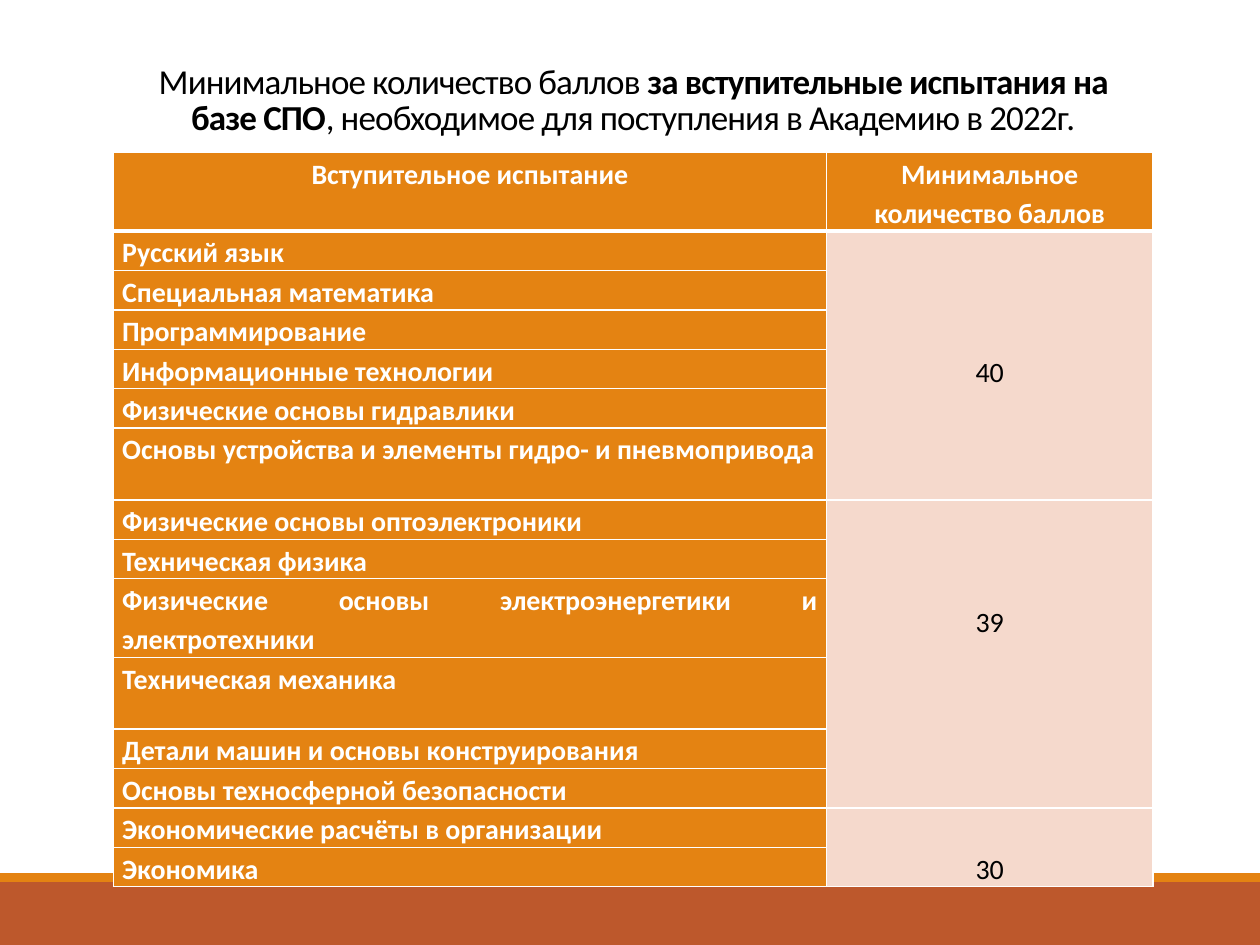
"""Build a slide listing minimum entrance exam scores."""
from lxml import etree
from pptx import Presentation, util as u
from pptx.dml.color import RGBColor
from pptx.enum import shapes, text
from pptx.oxml.ns import qn

TITLE = [
    ("Минимальное количество баллов ", False),
    ("за вступительные испытания на базе СПО", True),
    (", необходимое для поступления в Академию в 2022г.", False),
]
HEADINGS = ("Вступительное испытание", "Минимальное количество баллов")
TALL_EXAMS = {
    "Основы устройства и элементы гидро- и пневмопривода": 0.57,
    "Физические основы электроэнергетики и электротехники": 0.62,
    "Техническая механика": 0.57,
}
GROUPS = [
    {"score": "40", "anchor": text.MSO_ANCHOR.MIDDLE, "top": 0.08, "bottom": 0,
     "exams": ["Русский язык", "Специальная математика", "Программирование",
               "Информационные технологии", "Физические основы гидравлики",
               "Основы устройства и элементы гидро- и пневмопривода"]},
    {"score": "39", "anchor": text.MSO_ANCHOR.MIDDLE, "top": 0, "bottom": 0.54,
     "exams": ["Физические основы оптоэлектроники", "Техническая физика",
               "Физические основы электроэнергетики и электротехники",
               "Техническая механика", "Детали машин и основы конструирования",
               "Основы техносферной безопасности"]},
    {"score": "30", "anchor": text.MSO_ANCHOR.BOTTOM, "top": 0, "bottom": 0,
     "exams": ["Экономические расчёты в организации", "Экономика"]},
]
THEME = {
    "font": "Calibri", "title_size": 20, "cell_size": 16,
    "orange": "E48312", "rust": "BD582C", "pink": "F5D9CC",
    "white": "FFFFFF", "black": "000000",
}
BARS = [(7, 0.5, "rust"), (6.93, 0.07, "orange")]
LEFT, WIDTH = 0.9, 8.25
COLUMNS = (5.66, 2.59)
HEADER_HEIGHT, EXAM_HEIGHT = 0.62, 0.31
CENTER, JUSTIFY, BEGIN = text.PP_ALIGN.CENTER, text.PP_ALIGN.JUSTIFY, text.PP_ALIGN.LEFT


def rgb(name):
    return RGBColor.from_string(THEME[name])


def style_font(font, size, color, bold):
    font.name = THEME["font"]
    font.size = u.Pt(THEME[size])
    font.color.rgb = rgb(color)
    font.bold = bold


def draw_borders(cell, top=1, bottom=1):
    properties = cell._tc.get_or_add_tcPr()
    for index, (side, points) in enumerate(
            (("lnL", 1), ("lnR", 1), ("lnT", top), ("lnB", bottom))):
        border = etree.Element(qn(f"a:{side}"), w=str(u.Pt(points)))
        fill = etree.SubElement(border, qn("a:solidFill"))
        etree.SubElement(fill, qn("a:srgbClr"), val=THEME["white"])
        properties.insert(index, border)


def fill_cell(cell, words, fill, color, bold, align):
    cell.fill.solid()
    cell.fill.fore_color.rgb = rgb(fill)
    cell.margin_left = cell.margin_right = u.Inches(0.07)
    cell.margin_top = cell.margin_bottom = 0
    cell.text_frame.text = words
    paragraph = cell.text_frame.paragraphs[0]
    paragraph.alignment = align
    paragraph.line_spacing = 1.15
    for run in paragraph.runs:
        style_font(run.font, "cell_size", color, bold)


def add_bars(slide):
    for top, height, color in BARS:
        bar = slide.shapes.add_shape(shapes.MSO_SHAPE.RECTANGLE, 0, u.Inches(top),
                                     u.Inches(10), u.Inches(height))
        bar.shadow.inherit = False
        bar.fill.solid()
        bar.fill.fore_color.rgb = rgb(color)
        bar.line.fill.background()


def add_title(slide):
    title = slide.shapes.title
    title.left, title.top = u.Inches(LEFT), u.Inches(0.39)
    title.width, title.height = u.Inches(WIDTH), u.Inches(0.75)
    frame = title.text_frame
    frame.word_wrap = True
    frame.auto_size = text.MSO_AUTO_SIZE.NONE
    frame.vertical_anchor = text.MSO_ANCHOR.BOTTOM
    paragraph = frame.paragraphs[0]
    paragraph.alignment = CENTER
    paragraph.line_spacing = 0.85
    for words, bold in TITLE:
        run = paragraph.add_run()
        run.text = words
        style_font(run.font, "title_size", "black", bold)
        run._r.get_or_add_rPr().set("spc", "-50")


def add_scores(slide):
    exams = [exam for group in GROUPS for exam in group["exams"]]
    heights = [HEADER_HEIGHT] + [TALL_EXAMS.get(exam, EXAM_HEIGHT) for exam in exams]
    scores = slide.shapes.add_table(
        len(heights), len(COLUMNS), u.Inches(LEFT), u.Inches(1.21),
        u.Inches(WIDTH), u.Inches(sum(heights))).table
    scores.horz_banding = False
    for column, width in zip(scores.columns, COLUMNS):
        column.width = u.Inches(width)
    for row, height in zip(scores.rows, heights):
        row.height = u.Inches(height)

    for column, heading in enumerate(HEADINGS):
        fill_cell(scores.cell(0, column), heading, "orange", "white", True, CENTER)
    for row, exam in enumerate(exams, 1):
        align = BEGIN if exam.startswith("Основы устройства") else JUSTIFY
        fill_cell(scores.cell(row, 0), exam, "orange", "white", True, align)

    first = 1
    for group in GROUPS:
        last = first + len(group["exams"]) - 1
        score = scores.cell(first, 1)
        score.merge(scores.cell(last, 1))
        fill_cell(score, group["score"], "pink", "black", False, CENTER)
        score.vertical_anchor = group["anchor"]
        score.margin_top = u.Inches(group["top"])
        score.margin_bottom = u.Inches(group["bottom"])
        first = last + 1

    for row in range(len(heights)):
        for column in range(len(COLUMNS)):
            draw_borders(scores.cell(row, column), top=3 if row == 1 else 1,
                         bottom=3 if row == 0 else 1)


def main():
    deck = Presentation()
    deck.slide_width, deck.slide_height = u.Inches(10), u.Inches(7.5)
    slide = deck.slides.add_slide(deck.slide_layouts[5])
    add_bars(slide)
    add_title(slide)
    add_scores(slide)
    deck.save("out.pptx")


if __name__ == "__main__":
    main()
